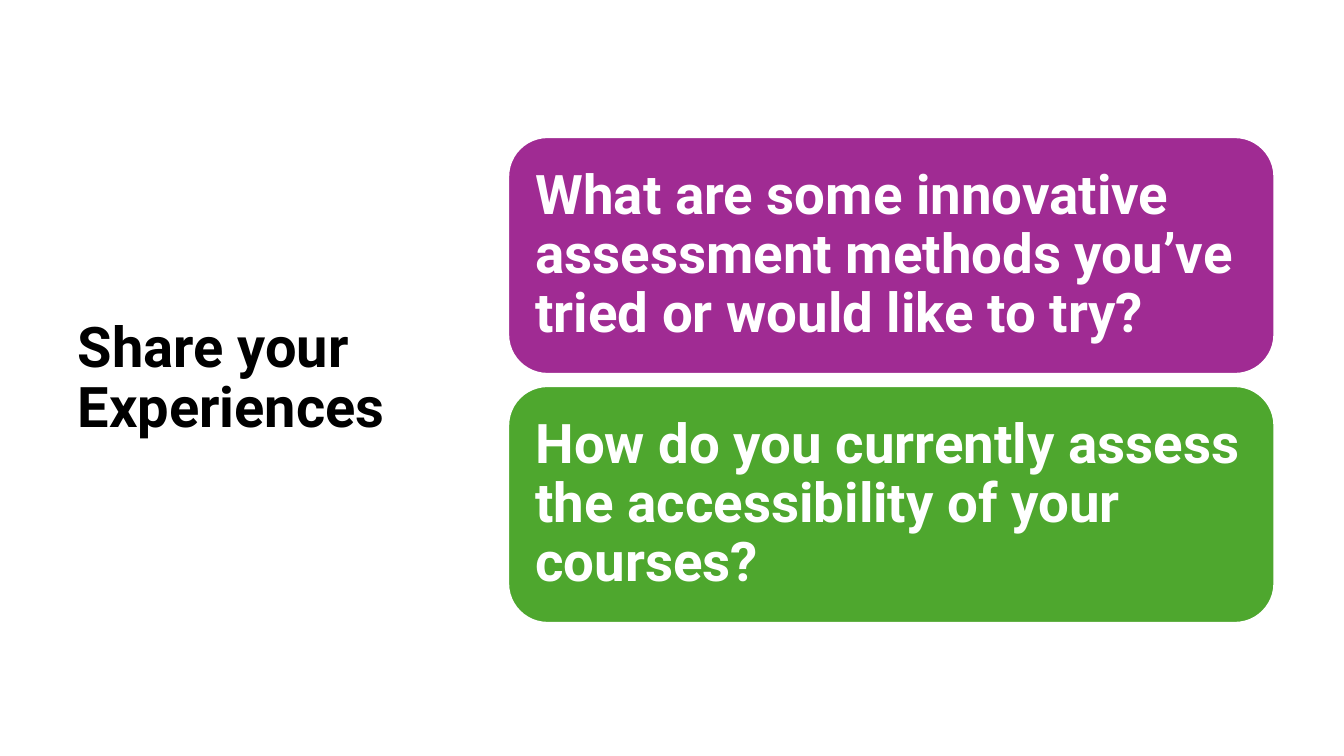
from dataclasses import dataclass

from pptx import Presentation
from pptx.dml.color import RGBColor
from pptx.enum import shapes, text
from pptx.util import Inches, Pt

BLACK = RGBColor(0x00, 0x00, 0x00)
WHITE = RGBColor(0xFF, 0xFF, 0xFF)
PURPLE = RGBColor(0xA0, 0x2B, 0x93)
GREEN = RGBColor(0x4E, 0xA7, 0x2E)

CARD_LEFT, CARD_TOP = 5.04, 1.36
CARD_WIDTH, CARD_HEIGHT = 7.6, 2.35
CARD_GAP = 0.12
CARD_INSET = 0.27


@dataclass
class Question:
    wording: str
    color: RGBColor


QUESTIONS = [
    Question("What are some innovative assessment methods you’ve tried or would like to try?", PURPLE),
    Question("How do you currently assess the accessibility of your courses?", GREEN),
]


def write(frame, wording: str, size: float, color: RGBColor) -> None:
    """Fill a text frame with one bold, left-aligned, vertically centred paragraph."""
    frame.text = wording
    frame.word_wrap = True
    frame.auto_size = text.MSO_AUTO_SIZE.NONE
    frame.vertical_anchor = text.MSO_ANCHOR.MIDDLE
    paragraph = frame.paragraphs[0]
    paragraph.alignment = text.PP_ALIGN.LEFT
    paragraph.line_spacing = 0.9
    paragraph.font.name = "Roboto"
    paragraph.font.size = Pt(size)
    paragraph.font.bold = True
    paragraph.font.color.rgb = color


def add_question(slide, question: Question, top: float) -> None:
    """Draw a rounded card holding one question."""
    card = slide.shapes.add_shape(
        shapes.MSO_SHAPE.ROUNDED_RECTANGLE,
        Inches(CARD_LEFT), Inches(top), Inches(CARD_WIDTH), Inches(CARD_HEIGHT),
    )
    card.shadow.inherit = False
    card.fill.solid()
    card.fill.fore_color.rgb = question.color
    card.line.color.rgb = WHITE
    card.line.width = Pt(1.5)

    # The rounded corners already inset the text, so the margins make up the rest
    corner_inset = card.adjustments[0] * CARD_HEIGHT * 0.29
    margin = Inches(CARD_INSET - corner_inset)
    frame = card.text_frame
    frame.margin_left = frame.margin_right = margin
    frame.margin_top = frame.margin_bottom = margin
    write(frame, question.wording, 39, WHITE)


def main() -> None:
    deck = Presentation()
    deck.slide_width, deck.slide_height = Inches(13.33), Inches(7.5)
    slide = deck.slides.add_slide(deck.slide_layouts.get_by_name("Title Only"))

    # Title on the left
    title = slide.shapes.title
    title.left, title.top = Inches(0.67), Inches(0.6)
    title.width, title.height = Inches(3.82), Inches(6.33)
    write(title.text_frame, "Share your Experiences", 40, BLACK)

    # Question cards stacked on the right
    for row, question in enumerate(QUESTIONS):
        add_question(slide, question, CARD_TOP + row * (CARD_HEIGHT + CARD_GAP))

    deck.save("out.pptx")


if __name__ == "__main__":
    main()
